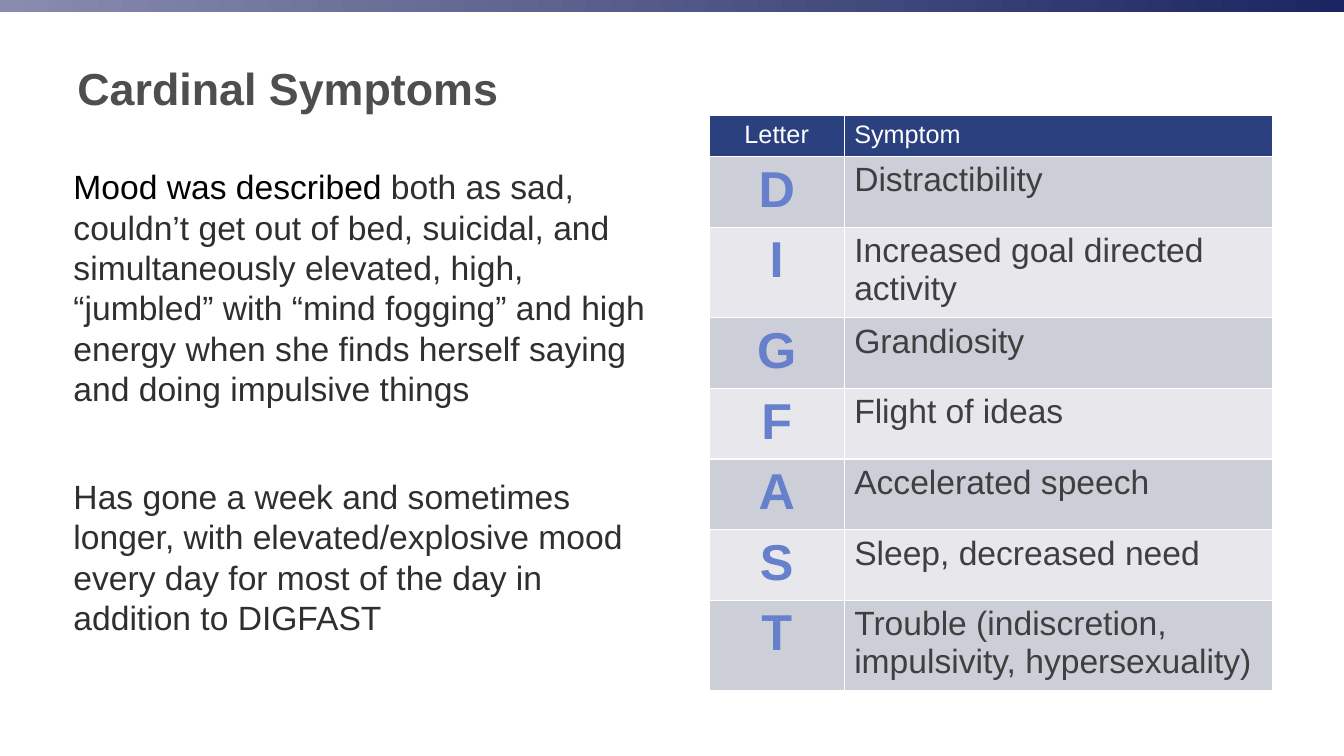
from lxml import etree
from pptx import Presentation
from pptx.dml.color import RGBColor
from pptx.enum import shapes, text
from pptx.oxml import ns
from pptx.util import Pt

TITLE = "Cardinal Symptoms"
PARAGRAPHS = [
    ["Mood was described ",
     "both as sad, couldn’t get out of bed, suicidal, and simultaneously elevated, high, "
     "“jumbled” with “mind fogging” and high energy when she finds herself saying "
     "and doing impulsive things"],
    ["Has gone a week and sometimes longer, with elevated/explosive mood every day "
     "for most of the day in addition to DIGFAST"],
]
HEADER = ("Letter", "Symptom")
SYMPTOMS = [
    ("D", "Distractibility"),
    ("I", "Increased goal directed activity"),
    ("G", "Grandiosity"),
    ("F", "Flight of ideas"),
    ("A", "Accelerated speech"),
    ("S", "Sleep, decreased need"),
    ("T", "Trouble (indiscretion, impulsivity, hypersexuality)"),
]
COL_WIDTHS = (96.4, 305.8)
ROW_HEIGHT = 29.2

FONT = "Arial"
WHITE = RGBColor(0xFF, 0xFF, 0xFF)
BLACK = RGBColor(0x00, 0x00, 0x00)
TITLE_GRAY = RGBColor(0x4D, 0x4E, 0x4D)
BODY_GRAY = RGBColor(0x2F, 0x2F, 0x2F)
CELL_GRAY = RGBColor(0x3F, 0x3F, 0x3F)
LETTER_BLUE = RGBColor(0x66, 0x80, 0xCB)
HEADER_BLUE = RGBColor(0x2B, 0x40, 0x7E)
BANDS = (RGBColor(0xCD, 0xCF, 0xD8), RGBColor(0xE8, 0xE8, 0xEC))
BAR_COLORS = (RGBColor(0x89, 0x8C, 0xAD), RGBColor(0x1C, 0x24, 0x63))


def style(r, size, color, bold=False):
    r.font.name = FONT
    r.font.size = Pt(size)
    r.font.color.rgb = color
    r.font.bold = bold


def add_text_box(slide, left, top, width, height, anchor):
    tf = slide.shapes.add_textbox(Pt(left), Pt(top), Pt(width), Pt(height)).text_frame
    tf.word_wrap = True
    tf.vertical_anchor = anchor
    return tf


def set_borders(cell, color, width):
    tc_pr = cell._tc.get_or_add_tcPr()
    for i, side in enumerate(("lnL", "lnR", "lnT", "lnB")):
        ln = etree.Element(ns.qn("a:" + side), w=str(Pt(width)))
        fill = etree.SubElement(ln, ns.qn("a:solidFill"))
        etree.SubElement(fill, ns.qn("a:srgbClr"), val=str(color))
        tc_pr.insert(i, ln)


def fill_cell(cell, value, fill, size, color, bold, centered):
    cell.fill.solid()
    cell.fill.fore_color.rgb = fill
    set_borders(cell, WHITE, 1)
    cell.text_frame.text = value
    p = cell.text_frame.paragraphs[0]
    p.alignment = text.PP_ALIGN.CENTER if centered else text.PP_ALIGN.LEFT
    style(p.runs[0], size, color, bold)


def add_bar(slide):
    sp = slide.shapes.add_shape(shapes.MSO_SHAPE.RECTANGLE, 0, 0, Pt(960), Pt(8.6))
    sp.shadow.inherit = False
    sp.line.fill.background()
    sp.fill.gradient()
    sp.fill.gradient_angle = 0
    for stop, position, color in zip(sp.fill.gradient_stops, (0, 1), BAR_COLORS):
        stop.position = position
        stop.color.rgb = color


def add_body(slide):
    tf = add_text_box(slide, 45.4, 115.2, 428.4, 365, text.MSO_ANCHOR.TOP)
    for i, parts in enumerate(PARAGRAPHS):
        p = tf.paragraphs[0] if i == 0 else tf.add_paragraph()
        p.space_before = Pt(48.5 if i else 0)
        for part in parts:
            r = p.add_run()
            r.text = part
            style(r, 24, BLACK if part != parts[-1] else BODY_GRAY)


def add_symptom_table(slide):
    row_count = len(SYMPTOMS) + 1
    table = slide.shapes.add_table(
        row_count, len(COL_WIDTHS), Pt(506.6), Pt(82.6),
        Pt(sum(COL_WIDTHS)), Pt(ROW_HEIGHT * row_count)).table
    for col, width in zip(table.columns, COL_WIDTHS):
        col.width = Pt(width)
    for row in table.rows:
        row.height = Pt(ROW_HEIGHT)
    for c, label in enumerate(HEADER):
        fill_cell(table.cell(0, c), label, HEADER_BLUE, 18, WHITE, False, c == 0)
    for i, (letter, symptom) in enumerate(SYMPTOMS):
        band = BANDS[i % 2]
        fill_cell(table.cell(i + 1, 0), letter, band, 36, LETTER_BLUE, True, True)
        fill_cell(table.cell(i + 1, 1), symptom, band, 24, CELL_GRAY, False, False)


def main():
    prs = Presentation()
    prs.slide_width, prs.slide_height = Pt(960), Pt(540)
    slide = prs.slides.add_slide(prs.slide_layouts[6])
    add_bar(slide)
    tf = add_text_box(slide, 48.2, 15.8, 846, 93.6, text.MSO_ANCHOR.MIDDLE)
    tf.text = TITLE
    style(tf.paragraphs[0].runs[0], 32, TITLE_GRAY, True)
    add_body(slide)
    add_symptom_table(slide)
    prs.save("out.pptx")


if __name__ == "__main__":
    main()
